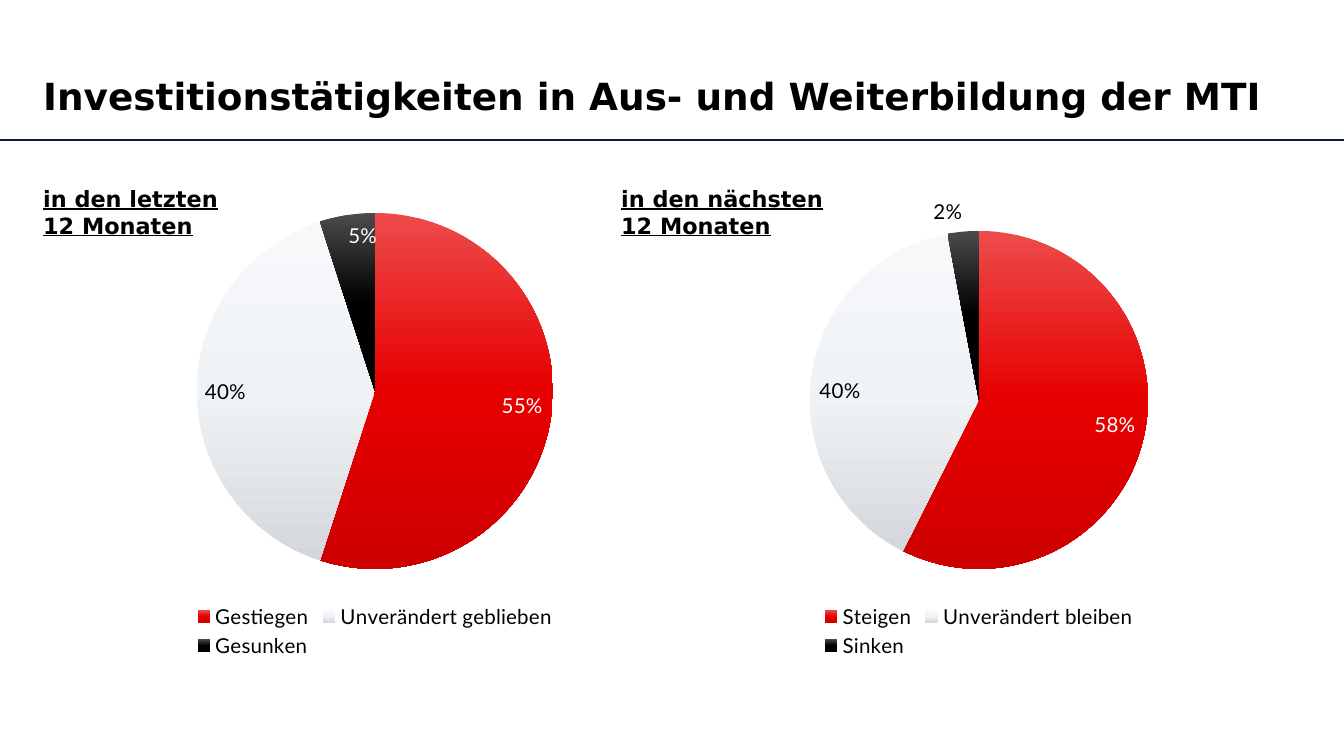
from copy import deepcopy
from dataclasses import dataclass

from lxml import etree
from pptx import Presentation
from pptx import util as u
from pptx.chart import data as chart_data
from pptx.dml import color
from pptx.enum import chart as chart_enum
from pptx.enum import shapes, text
from pptx.oxml import ns

PX = 914400 / 134.4


@dataclass(frozen=True)
class Theme:
    heading_font: str = "DejaVu Sans"
    chart_font: str = "Lato"
    title_size: int = 20
    heading_size: int = 12
    chart_size: int = 11
    black: str = "000000"
    white: str = "FFFFFF"
    rule: str = "0C1D2E"
    gradients: tuple = (
        ("ED4B4B", "E70000", "CD0000"),
        ("F7F8FA", "F0F3F6", "D4D8DC"),
        ("4B4B4B", "000000", "000000"),
    )


def px(*lengths):
    return [u.Emu(round(length * PX)) for length in lengths]


def rgb(value):
    return color.RGBColor.from_string(value)


class SlideBuilder:
    def __init__(self, slide, theme):
        self.slide = slide
        self.theme = theme

    def set_font(self, font, name, size, colour, bold=False):
        font.name = name
        font.size = u.Pt(size)
        font.color.rgb = rgb(colour)
        font.bold = bold

    def textbox(self, box, words, size, underline=False, anchor=text.MSO_ANCHOR.TOP, spacing=1.0):
        frame = self.slide.shapes.add_textbox(*px(*box)).text_frame
        frame.word_wrap = True
        frame.vertical_anchor = anchor
        paragraph = frame.paragraphs[0]
        paragraph.text = words
        paragraph.line_spacing = spacing
        self.set_font(paragraph.font, self.theme.heading_font, size, self.theme.black, True)
        paragraph.font.underline = underline

    def rule(self, left, right, top):
        line = self.slide.shapes.add_connector(
            shapes.MSO_CONNECTOR.STRAIGHT, *px(left, top, right, top))
        line.line.color.rgb = rgb(self.theme.rule)
        line.line.width = u.Pt(1.5)
        etree.SubElement(line._element.spPr, ns.qn("a:effectLst"))

    def place(self, element, index, frame, box):
        for old in element.findall(ns.qn("c:layout")):
            element.remove(old)
        layout = etree.Element(ns.qn("c:layout"))
        element.insert(index, layout)
        manual = etree.SubElement(layout, ns.qn("c:manualLayout"))
        left, top, width, height = frame
        values = {
            "xMode": "edge",
            "yMode": "edge",
            "x": round((box[0] - left) / width, 4),
            "y": round((box[1] - top) / height, 4),
            "w": round(box[2] / width, 4),
            "h": round(box[3] / height, 4),
        }
        if element.tag == ns.qn("c:plotArea"):
            values = {"layoutTarget": "inner", **values}
        for tag, value in values.items():
            etree.SubElement(manual, ns.qn(f"c:{tag}"), val=str(value))

    def pie(self, frame, pie_box, legend_box, categories, shares, labels):
        theme = self.theme
        data = chart_data.CategoryChartData(number_format="0%")
        data.categories = categories
        data.add_series("Series 1", shares)
        chart = self.slide.shapes.add_chart(
            chart_enum.XL_CHART_TYPE.PIE, *px(*frame), data).chart
        chart.has_title = False
        self.set_font(chart.font, theme.chart_font, theme.chart_size, theme.black)
        chart.has_legend = True
        chart.legend.position = chart_enum.XL_LEGEND_POSITION.BOTTOM
        chart.legend.include_in_layout = False
        self.set_font(chart.legend.font, theme.chart_font, theme.chart_size, theme.black)
        self.place(chart.legend._element, 1, frame, legend_box)
        self.place(chart._chartSpace.chart.plotArea, 0, frame, pie_box)

        plot = chart.plots[0]
        plot.vary_by_categories = True
        series = plot.series[0]
        series_labels = series.data_labels
        series_labels.show_value = True
        series_labels.number_format = "0%"
        series_labels.number_format_is_linked = False
        self.set_font(series_labels.font, theme.chart_font, theme.chart_size, theme.black)
        for index, (stops, label) in enumerate(zip(theme.gradients, labels)):
            point = series.points[index]
            self.fill_slice(point.format, series._element, stops)
            self.label_slice(point.data_label, *label)

    def fill_slice(self, style, series_element, colours):
        style.line.fill.background()
        style.fill.gradient()
        style.fill.gradient_angle = 270
        stop_list = series_element.xpath(".//a:gsLst")[-1]
        stop_list.append(deepcopy(stop_list[-1]))
        for index, (stop, colour) in enumerate(zip(style.fill.gradient_stops, colours)):
            stop.position = index / 2
            stop.color.rgb = rgb(colour)

    def label_slice(self, label, colour, position, words=None):
        font = label.font
        if words:
            label.text_frame.text = words
            font = label.text_frame.paragraphs[0].runs[0].font
        self.set_font(font, self.theme.chart_font, self.theme.chart_size, colour)
        label.position = position


def main():
    theme = Theme()
    presentation = Presentation()
    presentation.slide_width, presentation.slide_height = px(1344, 756)
    slide = presentation.slides.add_slide(presentation.slide_layouts[6])
    builder = SlideBuilder(slide, theme)
    inside = chart_enum.XL_LABEL_POSITION.INSIDE_END
    outside = chart_enum.XL_LABEL_POSITION.OUTSIDE_END
    light, dark = (theme.white, inside), (theme.black, inside)

    builder.rule(0, 1344, 140)
    builder.textbox((30, 20, 1281, 104),
                    "Investitionstätigkeiten in Aus- und Weiterbildung der MTI",
                    theme.title_size, anchor=text.MSO_ANCHOR.BOTTOM, spacing=0.8)
    builder.pie((116, 163, 520, 501), (197, 213, 356, 356), (190, 600, 370, 62),
                ("Gestiegen", "Unverändert geblieben", "Gesunken"),
                (0.55, 0.4, 0.05), (light, dark, light))
    builder.pie((728, 179, 503, 484), (810, 231, 338, 338), (818, 600, 322, 62),
                ("Steigen", "Unverändert bleiben", "Sinken"),
                (0.58, 0.4, 0.03), (light, dark, (theme.black, outside, "2%")))
    for left, width, words in ((30, 238, "in den letzten 12 Monaten"),
                               (608, 255, "in den nächsten 12 Monaten")):
        builder.textbox((left, 179, width, 67), words, theme.heading_size, underline=True)
    presentation.save("out.pptx")


if __name__ == "__main__":
    main()
